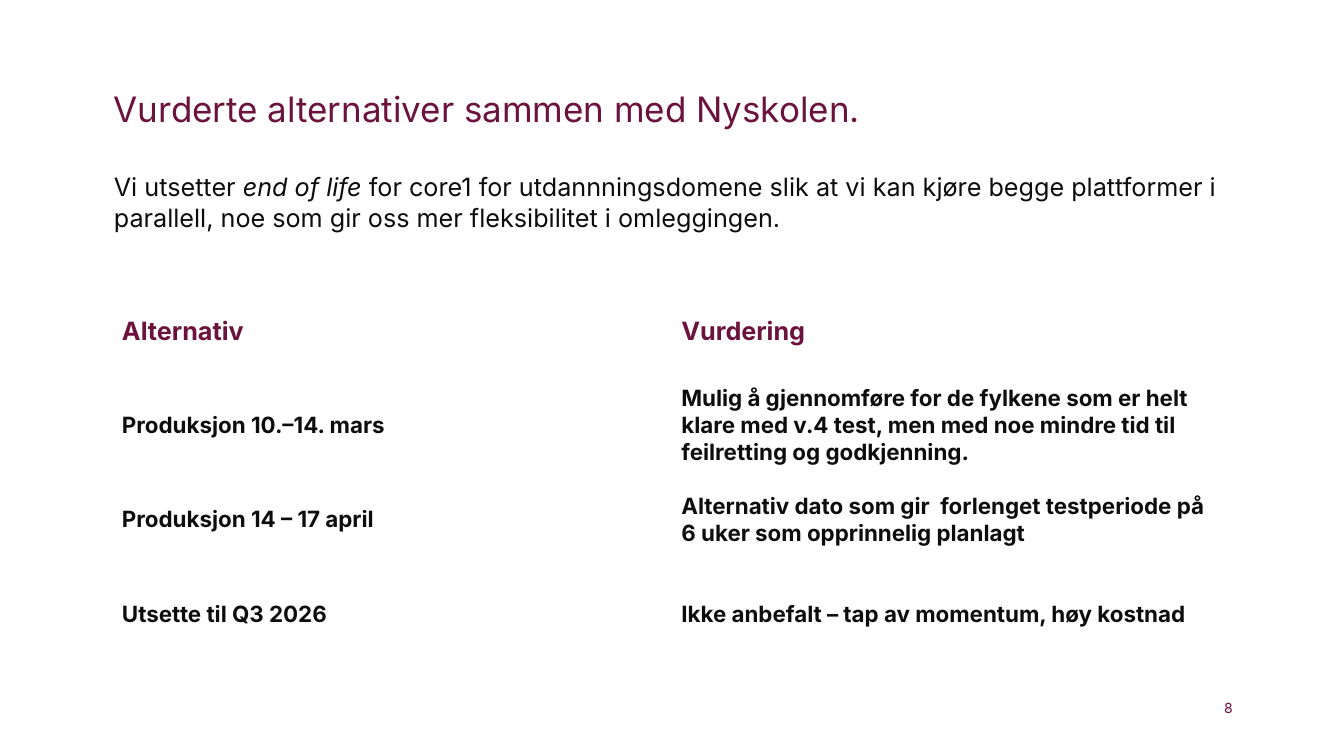
from pptx import Presentation
from pptx.dml.color import RGBColor
from pptx.enum.text import MSO_ANCHOR, PP_ALIGN
from pptx.util import Pt

MIDDLE = MSO_ANCHOR.MIDDLE
TOP = MSO_ANCHOR.TOP
LEFT = PP_ALIGN.LEFT
RIGHT = PP_ALIGN.RIGHT

FONT = "Inter"
PLUM = "6B133D"
INK = "0D0D0D"

TABLE_ROWS = [
    ("Alternativ", "Vurdering"),
    (
        "Produksjon 10.–14. mars",
        "Mulig å gjennomføre for de fylkene som er helt klare med v.4 test, "
        "men med noe mindre tid til feilretting og godkjenning.",
    ),
    (
        "Produksjon 14 – 17 april",
        "Alternativ dato som gir  forlenget testperiode på 6 uker "
        "som opprinnelig planlagt",
    ),
    ("Utsette til Q3 2026", "Ikke anbefalt – tap av momentum, høy kostnad"),
]


def color(value):
    return RGBColor.from_string(value)


def add_run(paragraph, text, size, text_color, bold=False, italic=False):
    run = paragraph.add_run()
    run.text = text
    run.font.name = FONT
    run.font.size = Pt(size)
    run.font.bold = bold
    run.font.italic = italic
    run.font.color.rgb = color(text_color)


def add_text_frame(slide, left, top, width, height, alignment=LEFT):
    shape = slide.shapes.add_textbox(Pt(left), Pt(top), Pt(width), Pt(height))
    frame = shape.text_frame
    frame.word_wrap = True
    frame.vertical_anchor = TOP
    frame.margin_left = frame.margin_right = 0
    frame.margin_top = frame.margin_bottom = 0
    frame.paragraphs[0].alignment = alignment
    return frame


def add_heading(slide):
    frame = add_text_frame(slide, 81.36, 62.64, 800, 112.32)
    add_run(frame.paragraphs[0], "Vurderte alternativer sammen med Nyskolen.", 25, PLUM)
    introduction = frame.add_paragraph()
    introduction.space_before = Pt(30)
    add_run(introduction, "Vi utsetter ", 18, INK)
    add_run(introduction, "end of life ", 18, INK, italic=True)
    add_run(
        introduction,
        "for core1 for utdannningsdomene slik at vi kan kjøre begge plattformer "
        "i parallell, noe som gir oss mer fleksibilitet i omleggingen.",
        18,
        INK,
    )


def add_alternatives_table(slide):
    shape = slide.shapes.add_table(
        len(TABLE_ROWS), 2, Pt(79.92), Pt(203.04), Pt(799.2), Pt(269.28)
    )
    table = shape.table
    table.first_row = False
    table.horz_banding = False
    for row_index, texts in enumerate(TABLE_ROWS):
        size, text_color = (18, PLUM) if row_index == 0 else (16, INK)
        for column_index, text in enumerate(texts):
            cell = table.cell(row_index, column_index)
            cell.fill.background()
            cell.vertical_anchor = MIDDLE
            add_run(cell.text_frame.paragraphs[0], text, size, text_color, bold=True)


def add_page_number(slide):
    frame = add_text_frame(slide, 849.6, 499.68, 30.96, 12.24, RIGHT)
    add_run(frame.paragraphs[0], "8", 10, PLUM)


def main():
    presentation = Presentation()
    presentation.slide_width = Pt(960)
    presentation.slide_height = Pt(540)
    slide = presentation.slides.add_slide(presentation.slide_layouts[6])
    add_alternatives_table(slide)
    add_page_number(slide)
    add_heading(slide)
    presentation.save("out.pptx")


if __name__ == "__main__":
    main()
